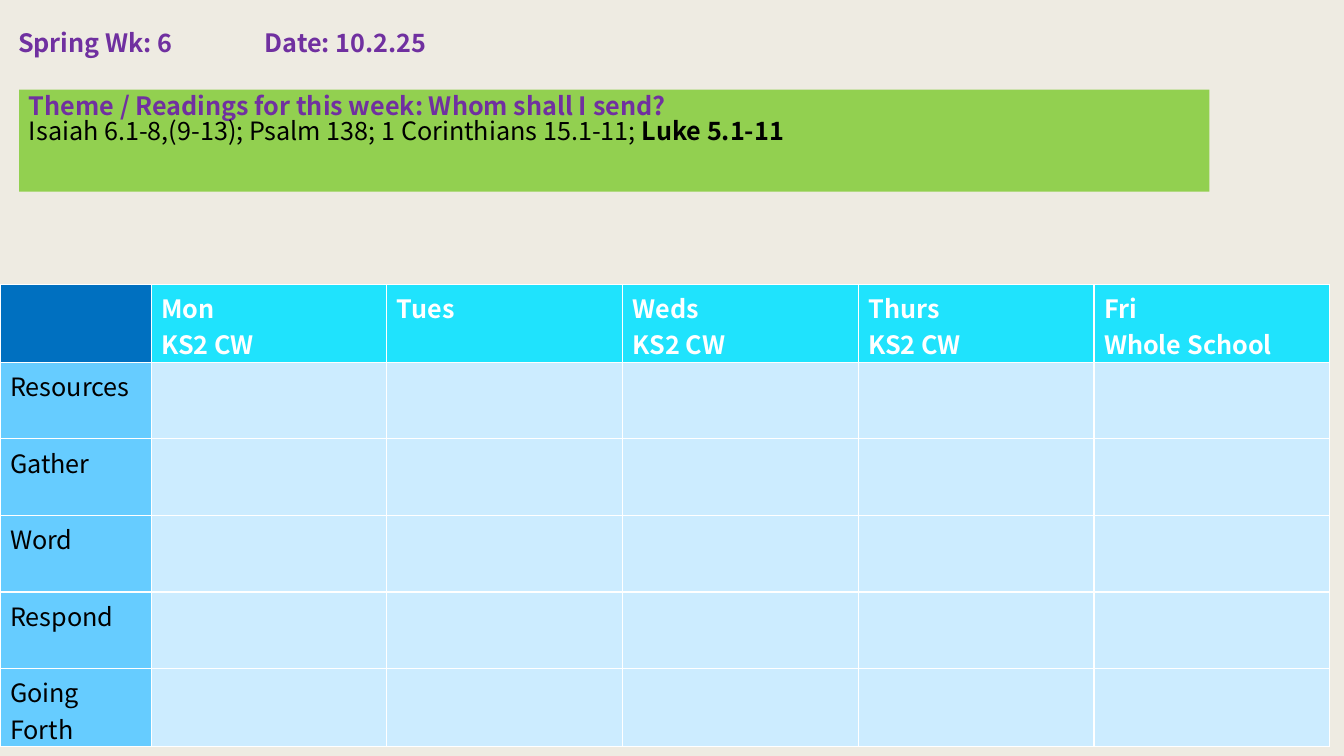
from lxml.etree import SubElement
from pptx import Presentation
from pptx.dml.color import RGBColor
from pptx.enum.shapes import MSO_SHAPE
from pptx.enum.text import MSO_ANCHOR, MSO_AUTO_SIZE, PP_ALIGN
from pptx.oxml.ns import qn
from pptx.util import Cm, Pt

COLORS = {
    "background": "EEEBE2", "purple": "7030A0", "green": "92D050",
    "corner": "0070C0", "day": "1FE3FD", "stage": "66CCFF",
    "empty": "CCECFF", "white": "FFFFFF", "black": "000000",
}
FONT = {"name": "Noto Sans CJK JP", "size": Pt(18)}

HEADING = [[("Spring Wk: 6\tDate: 10.2.25", "purple", True)]]
THEME = [
    [("Theme / Readings for this week: Whom shall I send?", "purple", True)],
    [("Isaiah 6.1-8,(9-13); Psalm 138; 1 Corinthians 15.1-11; ", "black", False),
     ("Luke 5.1-11", "black", True)],
]
DAYS = ["Mon\nKS2 CW", "Tues", "Weds\nKS2 CW", "Thurs\nKS2 CW", "Fri\nWhole School"]
STAGES = ["Resources", "Gather", "Word", "Respond", "Going Forth"]

HEADING_BOX = (Cm(0.2), Cm(0.69), Cm(32.97), Cm(1.02))
THEME_BOX = (Cm(0.48), Cm(2.26), Cm(30), Cm(2.57))
DATE_TAB = Cm(6.22)
TABLE_TOP = Cm(7.16)
STAGE_WIDTH, DAY_WIDTH, ROW_HEIGHT = Cm(3.81), Cm(5.94), Cm(1.93)


def color(name):
    return RGBColor.from_string(COLORS[name])


def paint(target, name):
    target.fill.solid()
    target.fill.fore_color.rgb = color(name)


def format_font(font, color_name, bold):
    for attribute, value in {**FONT, "bold": bold}.items():
        setattr(font, attribute, value)
    font.color.rgb = color(color_name)


def write_lines(frame, lines):
    settings = {"word_wrap": True, "auto_size": MSO_AUTO_SIZE.NONE,
                "vertical_anchor": MSO_ANCHOR.TOP}
    for attribute, value in settings.items():
        setattr(frame, attribute, value)
    for index, line in enumerate(lines):
        paragraph = frame.add_paragraph() if index else frame.paragraphs[0]
        paragraph.alignment = PP_ALIGN.LEFT
        paragraph.line_spacing = 0.85
        for text, color_name, bold in line:
            run = paragraph.add_run()
            run.text = text
            format_font(run.font, color_name, bold)


def add_heading(slide):
    title = slide.shapes.title
    title.left, title.top, title.width, title.height = HEADING_BOX
    write_lines(title.text_frame, HEADING)
    properties = title.text_frame.paragraphs[0]._p.get_or_add_pPr()
    tabs = SubElement(properties, qn("a:tabLst"))
    SubElement(tabs, qn("a:tab"), pos=str(DATE_TAB), algn="l")


def add_theme(slide):
    box = slide.shapes.add_shape(MSO_SHAPE.RECTANGLE, *THEME_BOX)
    box.shadow.inherit = False
    box.line.fill.background()
    paint(box, "green")
    write_lines(box.text_frame, THEME)


def fill_cell(cell, text, fill, text_color, bold):
    paint(cell, fill)
    cell.margin_bottom = 0
    cell.text = text
    for paragraph in cell.text_frame.paragraphs:
        for run in paragraph.runs:
            format_font(run.font, text_color, bold)


def add_planner(slide):
    rows, columns = len(STAGES) + 1, len(DAYS) + 1
    width = STAGE_WIDTH + DAY_WIDTH * len(DAYS)
    table = slide.shapes.add_table(
        rows, columns, 0, TABLE_TOP, width, ROW_HEIGHT * rows).table
    for index, column in enumerate(table.columns):
        column.width = DAY_WIDTH if index else STAGE_WIDTH
    for row_index, row in enumerate(table.rows):
        row.height = ROW_HEIGHT
        for column_index, cell in enumerate(row.cells):
            if row_index and column_index:
                fill_cell(cell, "", "empty", "black", False)
            elif row_index:
                fill_cell(cell, STAGES[row_index - 1], "stage", "black", False)
            elif column_index:
                fill_cell(cell, DAYS[column_index - 1], "day", "white", True)
            else:
                fill_cell(cell, "", "corner", "white", True)


def main():
    presentation = Presentation()
    presentation.slide_width, presentation.slide_height = Cm(33.87), Cm(19.05)
    slide = presentation.slides.add_slide(presentation.slide_layouts[5])
    paint(slide.background, "background")
    add_heading(slide)
    add_theme(slide)
    add_planner(slide)
    presentation.save("out.pptx")


if __name__ == "__main__":
    main()
